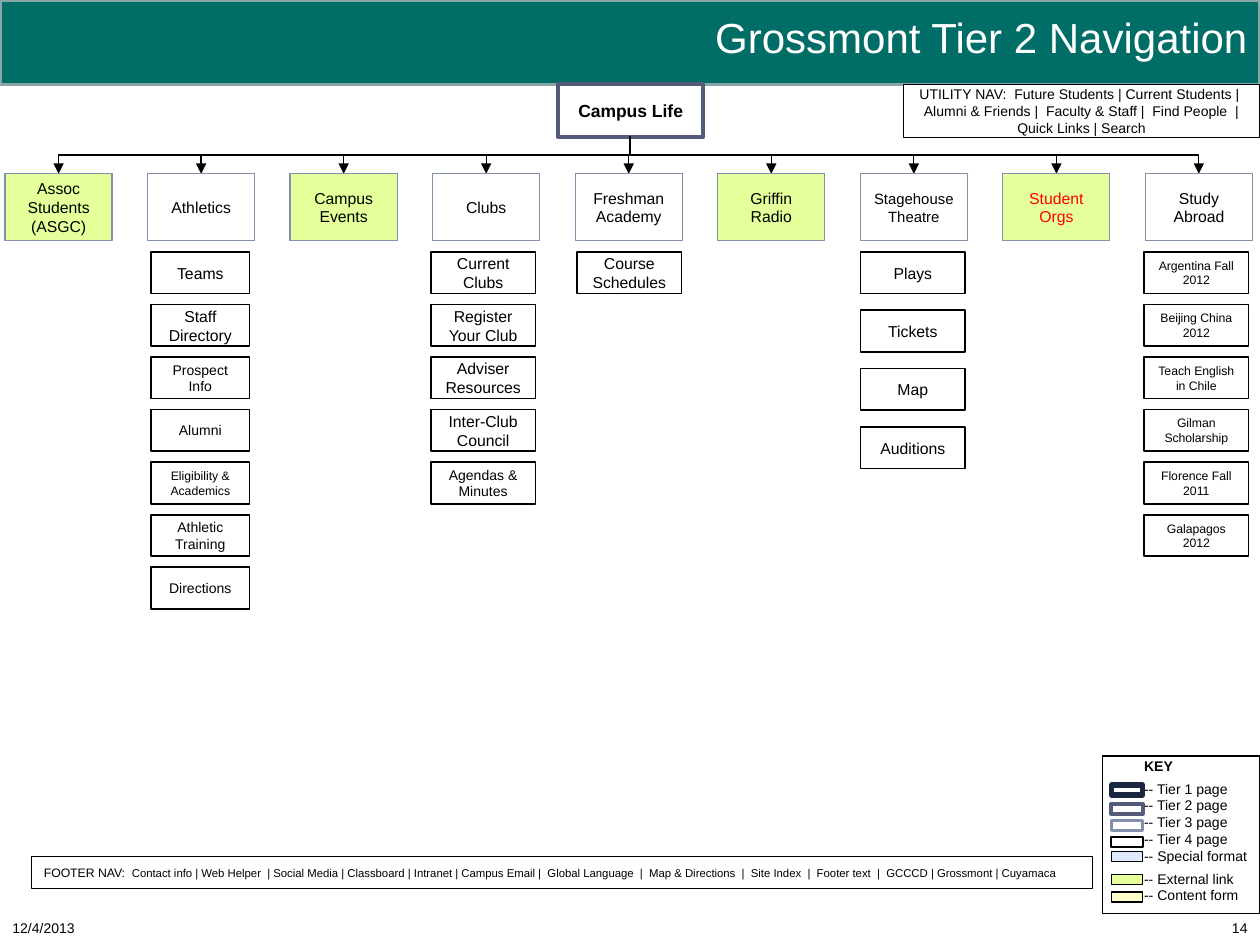
from lxml import etree
from pptx import Presentation
from pptx.dml.color import RGBColor
from pptx.enum.shapes import MSO_CONNECTOR, MSO_SHAPE
from pptx.enum.text import MSO_ANCHOR, MSO_AUTO_SIZE, PP_ALIGN
from pptx.oxml.ns import qn
from pptx.util import Inches, Pt

RECT = MSO_SHAPE.RECTANGLE
ELBOW = MSO_CONNECTOR.ELBOW
MIDDLE = MSO_ANCHOR.MIDDLE
LEFT, CENTER, RIGHT = PP_ALIGN.LEFT, PP_ALIGN.CENTER, PP_ALIGN.RIGHT

COLORS = {
    "banner": "006D67", "banner_edge": "8AA6A8",
    "white": "FFFFFF", "black": "000000", "red": "FF0000",
    "tier1": "1B263F", "tier2": "525B78", "tier3": "8390AD",
    "special": "DEE8FF", "external": "E5FF9B", "content": "FFFFCC",
}

prs = Presentation()
prs.slide_width, prs.slide_height = Inches(10), Inches(7.5)
slide = prs.slides.add_slide(prs.slide_layouts[5])


def style_text(paragraph, size, align=LEFT, color="black", bold=False):
    paragraph.alignment = align
    paragraph.font.name = "Arial"
    paragraph.font.size = Pt(size)
    paragraph.font.bold = bold
    paragraph.font.color.rgb = RGBColor.from_string(COLORS[color])


def add_box(left, top, width, height, fill, edge, edge_width, text="",
            size=9, align=CENTER, color="black", bold=False):
    box = slide.shapes.add_shape(RECT, Inches(left), Inches(top), Inches(width), Inches(height))
    box.shadow.inherit = False
    if fill:
        box.fill.solid()
        box.fill.fore_color.rgb = RGBColor.from_string(COLORS[fill])
    else:
        box.fill.background()
    box.line.color.rgb = RGBColor.from_string(COLORS[edge])
    box.line.width = Pt(edge_width)
    if text:
        frame = box.text_frame
        frame.word_wrap = True
        frame.vertical_anchor = MIDDLE
        frame.text = text
        style_text(frame.paragraphs[0], size, align, color, bold)
    return box


add_box(0, 0, 10, 0.67, "banner", "banner_edge", 2)
add_box(7.17, 0.67, 2.83, 0.42, "white", "black", 0.75,
        "UTILITY NAV:  Future Students | Current Students |  Alumni & Friends |  "
        "Faculty & Staff |  Find People  | Quick Links | Search", 8)

footer_nav = add_box(0.25, 6.8, 8.42, 0.25, "white", "black", 0.75, "FOOTER NAV:  ", 7, LEFT)
footer_links = footer_nav.text_frame.paragraphs[0].add_run()
footer_links.text = (
    "Contact info | Web Helper  | Social Media | Classboard | Intranet | Campus Email |  "
    "Global Language  |  Map & Directions  |  Site Index  |  Footer text  |  "
    "GCCCD | Grossmont | Cuyamaca")
footer_links.font.size = Pt(6.5)

title = slide.shapes.title
title.left, title.top, title.width, title.height = Inches(4.25), Inches(0), Inches(5.75), Inches(0.58)
title.text_frame.text = "Grossmont Tier 2 Navigation"
title.text_frame.auto_size = MSO_AUTO_SIZE.NONE
title.text_frame.vertical_anchor = MIDDLE
style_text(title.text_frame.paragraphs[0], 24, RIGHT, "white")
slide.shapes._spTree.append(title._element)

add_box(8.75, 6, 1.25, 1.25, None, "black", 0.75)
key_swatches = [
    (6.23, "white", "tier1", 3),
    (6.38, "white", "tier2", 2.25),
    (6.51, "white", "tier3", 1.5),
    (6.64, "white", "black", 1),
    (6.76, "special", "black", 0.75),
    (6.94, "external", "black", 0.75),
    (7.08, "content", "black", 0.75),
]
for top, fill, edge, edge_width in key_swatches:
    add_box(8.82, top, 0.25, 0.08, fill, edge, edge_width)

key_frame = slide.shapes.add_textbox(Inches(9.08), Inches(6.01), Inches(0.92), Inches(1.19)).text_frame
key_frame.word_wrap = True
key_frame.margin_left = key_frame.margin_right = key_frame.margin_top = key_frame.margin_bottom = 0
key_frame.text = (
    "KEY\n"
    "-- Tier 1 page\v-- Tier 2 page\v-- Tier 3 page\v-- Tier 4 page\v-- Special format\n"
    "-- External link\v-- Content form")
for position, paragraph in enumerate(key_frame.paragraphs):
    style_text(paragraph, 8, bold=position == 0)
    paragraph.space_after = Pt(3.5)

for left, text, align in [(0, "12/4/2013", LEFT), (7.67, "14", RIGHT)]:
    corner_frame = slide.shapes.add_textbox(Inches(left), Inches(7.25), Inches(2.33), Inches(0.25)).text_frame
    corner_frame.word_wrap = True
    corner_frame.text = text
    style_text(corner_frame.paragraphs[0], 8, align)

add_box(4.43, 0.67, 1.15, 0.42, "white", "tier2", 2.25, "Campus Life", 10, bold=True)

sections = [
    ("Assoc Students (ASGC)", 9, "external", "black"),
    ("Athletics", 9, "white", "black"),
    ("Campus Events", 9, "external", "black"),
    ("Clubs", 9, "white", "black"),
    ("Freshman Academy", 9, "white", "black"),
    ("Griffin Radio", 9, "external", "black"),
    ("Stagehouse Theatre", 8.5, "white", "black"),
    ("Student Orgs", 9, "external", "red"),
    ("Study Abroad", 9, "white", "black"),
]
ROOT_X, ROOT_BOTTOM, SECTION_TOP, SECTION_WIDTH = 5, 1.08, 1.38, 0.85
drop = SECTION_TOP - ROOT_BOTTOM
middle_y = (ROOT_BOTTOM + SECTION_TOP) / 2
for column, (text, size, fill, color) in enumerate(sections):
    left = 0.04 + column * 9.05 / 8
    target_x = left + SECTION_WIDTH / 2
    middle_x = (ROOT_X + target_x) / 2
    reach = abs(target_x - ROOT_X)
    goes_right = target_x > ROOT_X
    run = -drop / 2 if goes_right else drop / 2
    branch = slide.shapes.add_connector(
        ELBOW, Inches(middle_x - run), Inches(middle_y - reach / 2),
        Inches(middle_x + run), Inches(middle_y + reach / 2))
    branch.rotation = 270 if goes_right else 90
    branch.line.color.rgb = RGBColor.from_string(COLORS["black"])
    branch.line.width = Pt(0.75)
    etree.SubElement(branch.line._get_or_add_ln(), qn("a:tailEnd"), type="triangle")
    etree.SubElement(branch._element.spPr, qn("a:effectLst"))
    add_box(left, SECTION_TOP, SECTION_WIDTH, 0.53, fill, "tier3", 0.75, text, size, color=color)

page_columns = [
    (1.2, 0.78, 0.417, [("Teams", 9), ("Staff Directory", 9), ("Prospect Info", 8), ("Alumni", 8),
                        ("Eligibility & Academics", 7), ("Athletic Training", 8), ("Directions", 8)]),
    (3.42, 0.83, 0.417, [("Current Clubs", 9), ("Register Your Club", 9), ("Adviser Resources", 9),
                         ("Inter-Club Council", 9), ("Agendas & Minutes", 8)]),
    (4.58, 0.83, 0.417, [("Course Schedules", 9)]),
    (6.83, 0.83, 0.463, [("Plays", 9), ("Tickets", 9), ("Map", 9), ("Auditions", 9)]),
    (9.08, 0.83, 0.417, [("Argentina Fall 2012", 7), ("Beijing China 2012", 7),
                         ("Teach English in Chile", 7), ("Gilman Scholarship", 7),
                         ("Florence Fall 2011", 7), ("Galapagos 2012", 7)]),
]
for left, width, pitch, pages in page_columns:
    for row, (text, size) in enumerate(pages):
        add_box(left, 2 + row * pitch, width, 0.33, "white", "black", 1, text, size)

prs.save("out.pptx")
